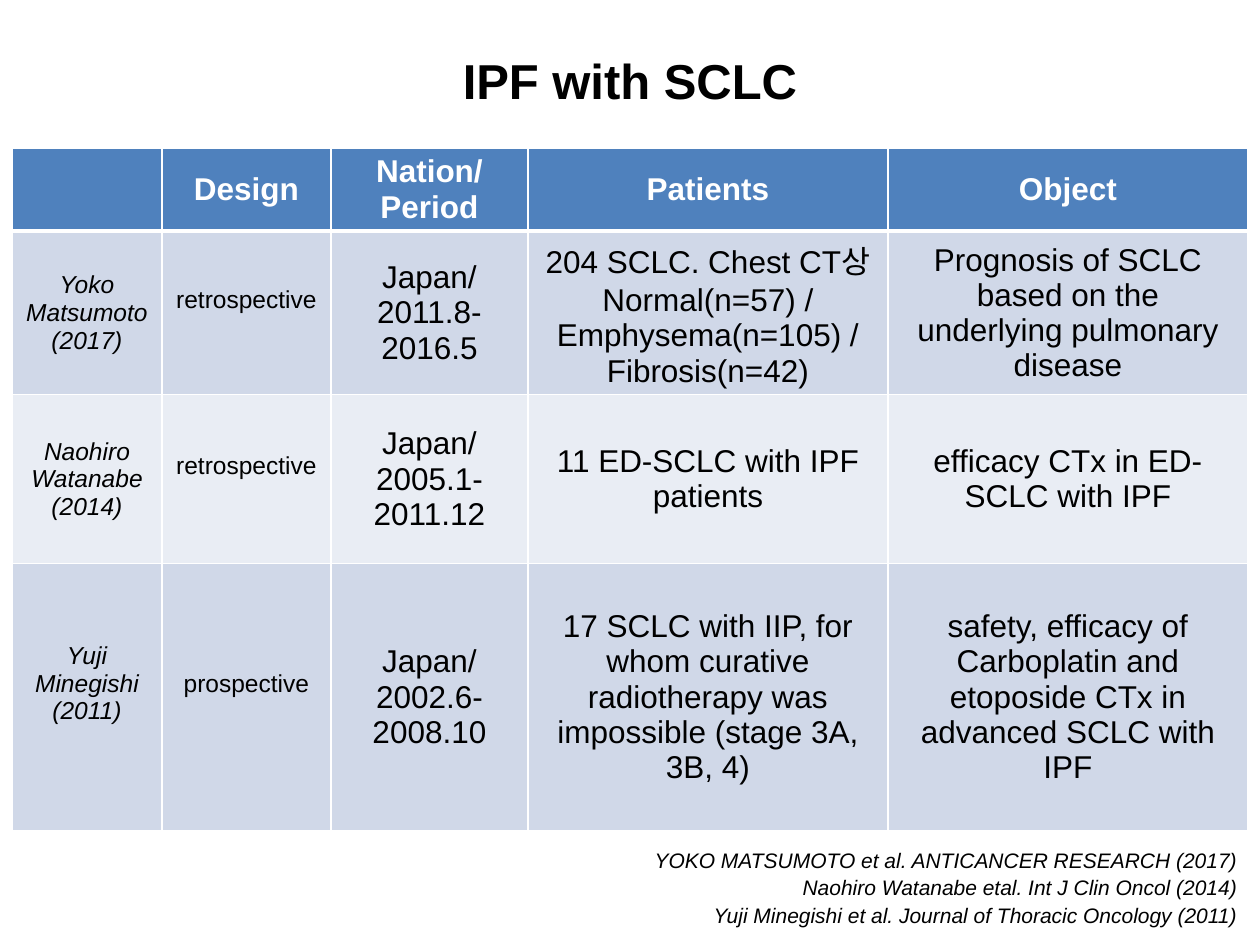
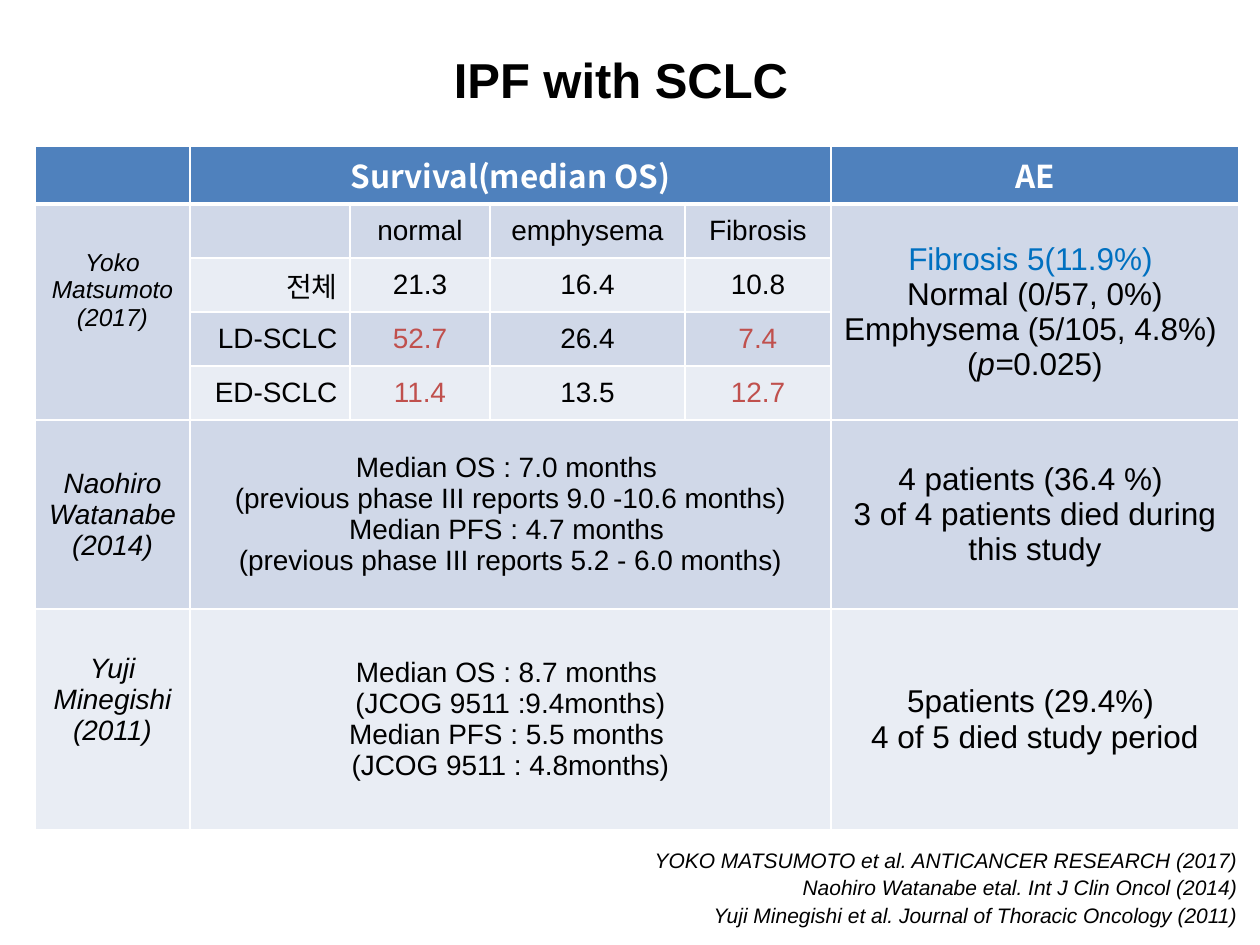
"""Build two slides that compare three studies of IPF with SCLC."""
from lxml import etree
from pptx import Presentation
from pptx.dml.color import RGBColor
from pptx.enum.text import MSO_ANCHOR, PP_ALIGN
from pptx.oxml.ns import qn
from pptx.util import Pt

PX = 914400 // 126
MIDDLE = MSO_ANCHOR.MIDDLE
CENTER, RIGHT = PP_ALIGN.CENTER, PP_ALIGN.RIGHT
BLACK = RGBColor(0x00, 0x00, 0x00)
WHITE = RGBColor(0xFF, 0xFF, 0xFF)
HEADER_BLUE = RGBColor(0x4F, 0x81, 0xBD)
BANDS = RGBColor(0xE9, 0xED, 0xF4), RGBColor(0xD0, 0xD8, 0xE8)
RED = RGBColor(0xC0, 0x50, 0x4D)
BLUE = RGBColor(0x00, 0x70, 0xC0)
LATIN, KOREAN = "Arial", "Noto Sans CJK KR"
CELL_MARGIN = 6

TITLE = "IPF with SCLC"
TITLE_FORMAT = {"size": Pt(28), "bold": True}
CITATIONS = """YOKO MATSUMOTO et al. ANTICANCER RESEARCH (2017)
Naohiro Watanabe etal. Int J Clin Oncol (2014)
Yuji Minegishi et al. Journal of Thoracic Oncology (2011)"""
CITATION_FORMAT = {"size": Pt(12), "italic": True}
YOKO, NAOHIRO, YUJI = STUDIES = (
    "Yoko Matsumoto (2017)", "Naohiro Watanabe (2014)", "Yuji Minegishi (2011)")

ADVERSE_EVENTS = [
    [("Fibrosis 5(11.9%) ", {"color": BLUE})],
    [("Normal (0/57, 0%) Emphysema (5/105, 4.8%) ", {})],
    [("(", {}), ("p=", {"italic": True}), ("0.025)", {})],
]

SLIDES = [
    {
        "title": (63, 26, 1134, 107),
        "origin": (12, 148),
        "columns": [150, 169, 197, 360, 360],
        "heights": [83, 163, 169, 267],
        "sizes": [14, 14, 18, 18, 18],
        "header_font": LATIN,
        "rows": [
            ["", "Design", "Nation/\nPeriod", "Patients", "Object"],
            [YOKO, "retrospective", "Japan/\n2011.8- 2016.5",
             "204 SCLC. Chest CT상\n"
             "Normal(n=57) / Emphysema(n=105) / Fibrosis(n=42)",
             "Prognosis of SCLC based on the underlying pulmonary disease"],
            [NAOHIRO, "retrospective", "Japan/\n2005.1-2011.12",
             "11 ED-SCLC with IPF patients",
             "efficacy CTx in ED-SCLC with IPF"],
            [YUJI, "prospective", "Japan/\n2002.6-2008.10",
             "17 SCLC with IIP, for whom curative radiotherapy was impossible "
             "(stage 3A, 3B, 4)",
             "safety, efficacy of Carboplatin and etoposide CTx in "
             "advanced SCLC with IPF"],
        ],
        "merges": [],
        "lifts": {(1, 1): 27, (2, 1): 27, (3, 0): 27, (3, 1): 27},
        "formats": {},
        "right_aligned": [],
    },
    {
        "title": (54, 0, 1134, 158),
        "origin": (35, 146),
        "columns": [155, 160, 140, 195, 146, 408],
        "heights": [58, 54, 54, 54, 54, 189, 221],
        "sizes": [16, 16, 16, 16, 16, 18],
        "header_font": KOREAN,
        "rows": [
            ["", "Survival(median OS)", "", "", "", "AE"],
            [YOKO, "", "normal", "emphysema", "Fibrosis", ADVERSE_EVENTS],
            ["", "전체", "21.3", "16.4", "10.8", ""],
            ["", "LD-SCLC", "52.7", "26.4", "7.4", ""],
            ["", "ED-SCLC", "11.4", "13.5", "12.7", ""],
            [NAOHIRO,
             "Median OS : 7.0 months \n"
             "(previous phase III reports 9.0 -10.6 months)\n"
             "Median PFS : 4.7 months \n"
             "(previous phase III reports 5.2 - 6.0 months)", "", "", "",
             "4 patients (36.4 %) \n3 of 4 patients died during this study"],
            [YUJI,
             "Median OS : 8.7 months \n(JCOG 9511 :9.4months)\n"
             "Median PFS : 5.5 months \n(JCOG 9511 : 4.8months)", "", "", "",
             "5patients (29.4%) \n4 of 5 died study period"],
        ],
        "merges": [((0, 1), (0, 4)), ((1, 0), (4, 0)), ((1, 5), (4, 5)),
                   ((5, 1), (5, 4)), ((6, 1), (6, 4))],
        "lifts": {(1, 0): 44, (6, 0): 40},
        "formats": {(1, 0): {"size": Pt(14)},
                    **{(row, column): {"color": RED}
                       for row in (3, 4) for column in (2, 4)}},
        "right_aligned": [(2, 1), (3, 1), (4, 1)],
    },
]


def px(*lengths):
    return [length * PX for length in lengths]


def write(frame, content, look, align=CENTER):
    """Fill a text frame from plain lines or from lists of formatted runs."""
    if isinstance(content, str):
        content = [[(line, {})] for line in content.split("\n")]
    for index, runs in enumerate(content):
        paragraph = frame.add_paragraph() if index else frame.paragraphs[0]
        paragraph.alignment = align
        for text, changes in runs:
            if not text:
                continue
            run = paragraph.add_run()
            run.text = text
            values = {"name": LATIN, "color": BLACK, "bold": False,
                      "italic": False, **look, **changes}
            run.font.color.rgb = values.pop("color")
            for key, value in values.items():
                setattr(run.font, key, value)
            east_asian = etree.SubElement(run._r.get_or_add_rPr(), qn("a:ea"))
            east_asian.set("typeface", KOREAN)


def draw_borders(cell, row):
    """Put white rules on all four sides, thick below the header."""
    widths = {"L": 1, "R": 1, "T": 3 if row == 1 else 1, "B": 1 if row else 3}
    properties = cell._tc.get_or_add_tcPr()
    for position, (side, width) in enumerate(widths.items()):
        line = etree.Element(qn(f"a:ln{side}"), w=str(Pt(width)))
        fill = etree.SubElement(line, qn("a:solidFill"))
        etree.SubElement(fill, qn("a:srgbClr"), val=str(WHITE))
        properties.insert(position, line)


def add_study_table(slide, spec_sheet):
    """Add the table with its bands, merges and text."""
    columns, heights = spec_sheet["columns"], spec_sheet["heights"]
    table = slide.shapes.add_table(
        len(heights), len(columns),
        *px(*spec_sheet["origin"], sum(columns), sum(heights))).table
    for column, width in zip(table.columns, columns):
        column.width = width * PX
    for row, height in zip(table.rows, heights):
        row.height = height * PX
    for first, last in spec_sheet["merges"]:
        table.cell(*first).merge(table.cell(*last))

    for r, contents in enumerate(spec_sheet["rows"]):
        for c, content in enumerate(contents):
            cell = table.cell(r, c)
            cell.fill.solid()
            cell.fill.fore_color.rgb = BANDS[r % 2] if r else HEADER_BLUE
            draw_borders(cell, r)
            cell.vertical_anchor = MIDDLE
            cell.margin_bottom = (CELL_MARGIN + spec_sheet["lifts"].get((r, c), 0)) * PX
            if r:
                look = {"size": Pt(spec_sheet["sizes"][c]),
                        "italic": content in STUDIES}
            else:
                look = {"size": Pt(18), "bold": True, "color": WHITE,
                        "name": spec_sheet["header_font"]}
            look.update(spec_sheet["formats"].get((r, c), {}))
            align = RIGHT if (r, c) in spec_sheet["right_aligned"] else CENTER
            write(cell.text_frame, content, look, align)


def add_title(slide, box):
    title = slide.shapes.title
    title.left, title.top, title.width, title.height = px(*box)
    title.text_frame.vertical_anchor = MIDDLE
    write(title.text_frame, TITLE, TITLE_FORMAT)


def add_citations(slide):
    frame = slide.shapes.add_textbox(*px(258, 839, 992, 92)).text_frame
    frame.word_wrap = True
    write(frame, CITATIONS, CITATION_FORMAT, RIGHT)
    for paragraph in frame.paragraphs:
        paragraph.line_spacing = 1.09


def main():
    deck = Presentation()
    deck.slide_width, deck.slide_height = px(1260, 945)
    for spec_sheet in SLIDES:
        slide = deck.slides.add_slide(deck.slide_layouts[5])
        add_title(slide, spec_sheet["title"])
        add_study_table(slide, spec_sheet)
        add_citations(slide)
    deck.save("out.pptx")


if __name__ == "__main__":
    main()
